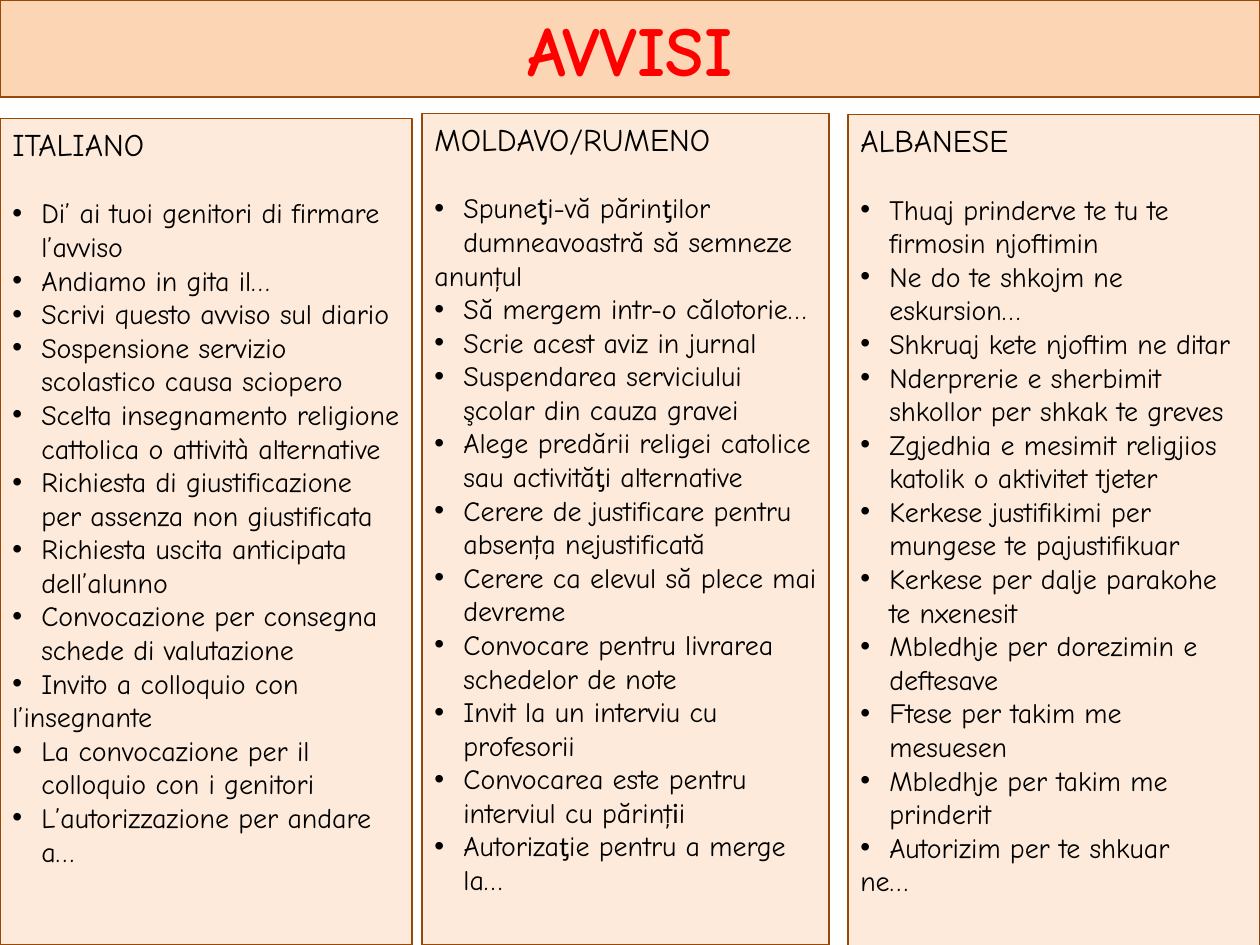
from lxml.etree import SubElement
from pptx import Presentation
from pptx.dml.color import RGBColor
from pptx.enum.shapes import MSO_SHAPE as Shape
from pptx.enum.text import MSO_ANCHOR as Anchor, PP_ALIGN as Align
from pptx.oxml.ns import qn
from pptx.util import Inches, Pt

FONT = "Comic Neue"
FALLBACK_FONT = "Calibri"

# Letters between bars are set in the fallback font.
COLUMNS = [
    (0, 0.94, 3.27, 6.56, "ITALIANO", [
        "Di’ ai tuoi genitori di firmare l’avviso",
        "Andiamo in gita il…",
        "Scrivi questo avviso sul diario",
        "Sospensione servizio scolastico causa sciopero",
        "Scelta insegnamento religione cattolica o attività alternative",
        "Richiesta di giustificazione per assenza non giustificata",
        "Richiesta uscita anticipata dell’alunno",
        "Convocazione per consegna schede di valutazione",
        "Invito a colloquio con",
        "l’insegnante",
        "La convocazione per il colloquio con i genitori",
        "L’autorizzazione per andare a…",
    ]),
    (3.35, 0.9, 3.23, 6.6, "MOLDAVO/RUMENO", [
        "Spuneƫi-vă părin|ƫ|ilor dumneavoastră să semneze",
        "anunțul",
        "Să mergem intr-o călotorie…",
        "Scrie acest aviz in jurnal",
        "Suspendarea serviciului şcolar din cauza gravei",
        "Alege predării religei catolice sau activită|ƫ|i alternative",
        "Cerere de justificare pentru absența nejustificată",
        "Cerere ca elevul să plece mai devreme",
        "Convocare pentru livrarea schedelor de note",
        "Invit la un interviu cu profesorii",
        "Convocarea este pentru interviul cu părinț|i|i",
        "Autoriza|ƫ|ie pentru a merge la…",
    ]),
    (6.73, 0.91, 3.27, 6.6, "ALBANESE", [
        "Thuaj prinderve te tu te firmosin njoftimin",
        "Ne do te shkojm ne eskursion…",
        "Shkruaj kete njoftim ne ditar",
        "Nderprerie e sherbimit shkollor per shkak te greves",
        "Zgjedhia e mesimit religjios katolik o aktivitet tjeter",
        "Kerkese justifikimi per mungese te pajustifikuar",
        "Kerkese per dalje parakohe te nxenesit",
        "Mbledhje per dorezimin e deftesave",
        "Ftese per takim me mesuesen",
        "Mbledhje per takim me prinderit",
        "Autorizim per te shkuar",
        "ne…",
    ]),
]
UNBULLETED = {"l’insegnante", "anunțul", "ne…"}


def add_box(left, top, width, height, fill):
    box = slide.shapes.add_shape(
        Shape.RECTANGLE, Inches(left), Inches(top), Inches(width), Inches(height))
    box.shadow.inherit = False
    box.fill.solid()
    box.fill.fore_color.rgb = RGBColor.from_string(fill)
    box.line.color.rgb = RGBColor.from_string("984807")
    box.line.width = Pt(0.75)
    box.text_frame.word_wrap = True
    box.text_frame.vertical_anchor = Anchor.TOP
    return box.text_frame


def format_text(item, size, color="000000", bold=False, name=FONT):
    """Set the font of a run or of a paragraph."""
    item.font.name = name
    item.font.size = Pt(size)
    item.font.bold = bold
    item.font.color.rgb = RGBColor.from_string(color)


deck = Presentation()
deck.slide_width, deck.slide_height = Inches(10), Inches(7.5)
slide = deck.slides.add_slide(deck.slide_layouts[6])

title = add_box(0, 0, 10, 0.77, "FCD5B5")
title.text = "AVVISI"
title.paragraphs[0].alignment = Align.CENTER
format_text(title.paragraphs[0].runs[0], 40, "FF0000", bold=True)

for left, top, width, height, language, notices in COLUMNS:
    frame = add_box(left, top, width, height, "FDEADA")
    frame.text = language
    heading = frame.paragraphs[0]
    heading.alignment = Align.LEFT
    heading.space_after = Pt(19.2)
    format_text(heading.runs[0], 18)

    for notice in notices:
        para = frame.add_paragraph()
        para.alignment = Align.LEFT
        if notice not in UNBULLETED:
            properties = para._p.get_or_add_pPr()
            properties.set("marL", str(Inches(0.23)))
            properties.set("indent", str(Inches(-0.23)))
            SubElement(properties, qn("a:buFont"), typeface="Arial")
            SubElement(properties, qn("a:buChar"), char="•")
        for index, piece in enumerate(notice.split("|")):
            span = para.add_run()
            span.text = piece
            format_text(span, 16, name=FALLBACK_FONT if index % 2 else FONT)

deck.save("out.pptx")
